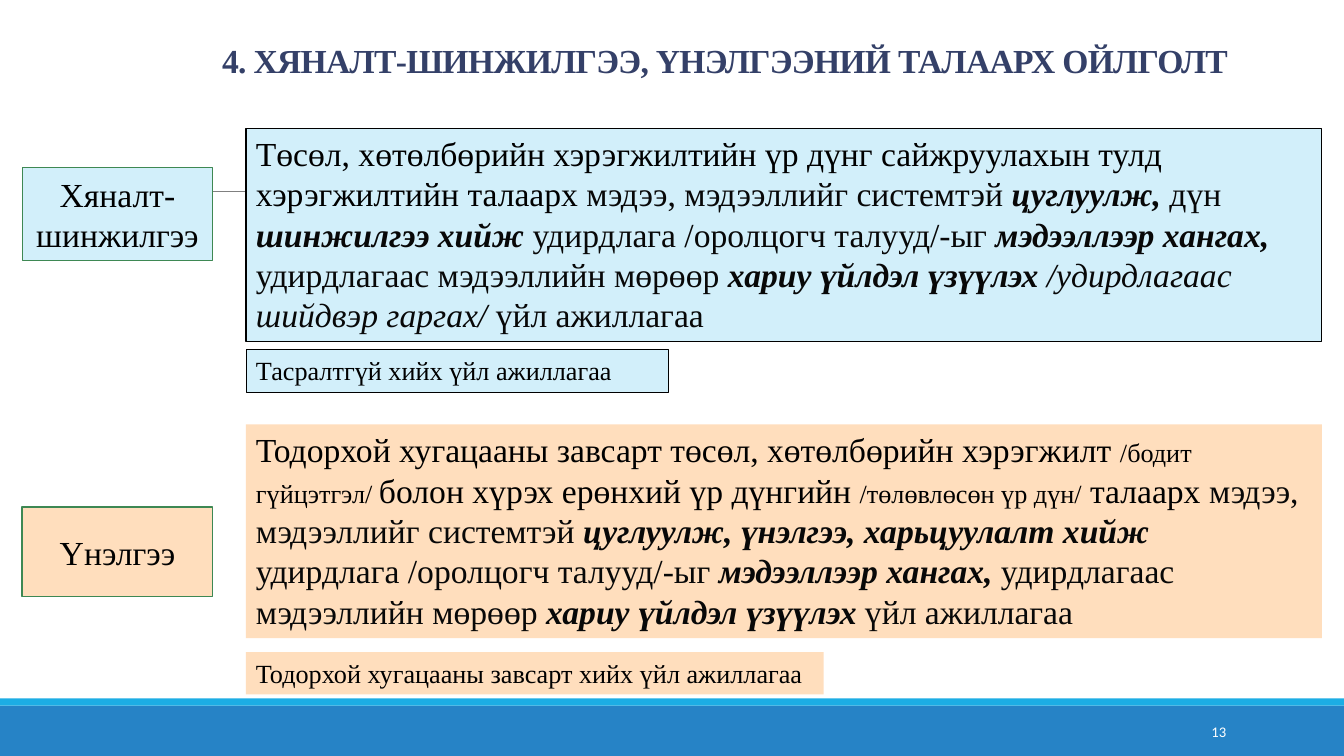
from lxml import etree
from pptx import Presentation
from pptx.dml.color import RGBColor
from pptx.enum.shapes import MSO_CONNECTOR, MSO_SHAPE
from pptx.enum.text import MSO_ANCHOR, PP_ALIGN
from pptx.oxml.ns import qn
from pptx.util import Inches, Pt

RECT = MSO_SHAPE.RECTANGLE
STRAIGHT = MSO_CONNECTOR.STRAIGHT
TOP, MIDDLE = MSO_ANCHOR.TOP, MSO_ANCHOR.MIDDLE
LEFT, CENTER, RIGHT = PP_ALIGN.LEFT, PP_ALIGN.CENTER, PP_ALIGN.RIGHT
SERIF, SANS = "Times New Roman", "Calibri"

COLORS = {
    "title": "344068", "black": "000000", "dark": "080808", "white": "FFFFFF",
    "blue": "D2EFFA", "peach": "FFDEBD", "green": "3E8853", "grey": "808080",
    "footer": "2683C6", "stripe": "1CADE4",
}

# style: size, colour, bold, italic
STYLES = {
    "plain": (24, "black", False, False),
    "small": (18.7, "black", False, False),
    "dark": (24, "dark", False, False),
    "strong": (24, "dark", True, True),
    "slanted": (24, "dark", False, True),
    "title": (24, "title", True, False),
    "number": (10.5, "white", False, False),
}

MONITORING = [
    ("Төсөл, хөтөлбөрийн хэрэгжилтийн үр дүнг сайжруулахын тулд хэрэгжилтийн талаарх ", "plain"),
    ("мэдээ, мэдээллийг системтэй ", "dark"),
    ("цуглуулж,", "strong"),
    (" дүн ", "dark"),
    ("шинжилгээ хийж ", "strong"),
    ("удирдлага /оролцогч талууд/-ыг ", "dark"),
    ("мэдээллээр хангах, ", "strong"),
    ("удирдлагаас мэдээллийн мөрөөр ", "dark"),
    ("хариу үйлдэл үзүүлэх ", "strong"),
    ("/удирдлагаас шийдвэр гаргах/ ", "slanted"),
    ("үйл ажиллагаа", "dark"),
]
EVALUATION = [
    ("Тодорхой хугацааны завсарт төсөл, хөтөлбөрийн хэрэгжилт ", "plain"),
    ("/бодит гүйцэтгэл/ ", "small"),
    ("болон хүрэх ерөнхий үр дүнгийн ", "plain"),
    ("/төлөвлөсөн үр дүн/", "small"),
    (" талаарх ", "plain"),
    ("мэдээ, мэдээллийг системтэй ", "dark"),
    ("цуглуулж, үнэлгээ, харьцуулалт хийж ", "strong"),
    ("удирдлага /оролцогч талууд/-ыг ", "dark"),
    ("мэдээллээр хангах, ", "strong"),
    ("удирдлагаас мэдээллийн мөрөөр ", "dark"),
    ("хариу үйлдэл үзүүлэх ", "strong"),
    ("үйл ажиллагаа", "dark"),
]


def rgb(name):
    """Return the named colour."""
    return RGBColor.from_string(COLORS[name])


def write(sp, runs, align=LEFT, anchor=TOP, wrap=True, font=SERIF):
    """Fill a shape with one paragraph of styled runs and return it."""
    tf = sp.text_frame
    tf.word_wrap = wrap
    tf.vertical_anchor = anchor
    p = tf.paragraphs[0]
    p.alignment = align
    p.font.name = font
    for text, style in runs:
        r = p.add_run()
        r.text = text
        size, color, bold, italic = STYLES[style]
        r.font.name = font
        r.font.size = Pt(size)
        r.font.bold, r.font.italic = bold, italic
        r.font.color.rgb = rgb(color)
    return p


def add_rect(s, box, fill, line=None, width=0.75):
    """Add a flat rectangle, outlined if a line colour is given."""
    sp = s.shapes.add_shape(RECT, *map(Inches, box))
    sp.shadow.inherit = False
    sp.fill.solid()
    sp.fill.fore_color.rgb = rgb(fill)
    if line:
        sp.line.color.rgb = rgb(line)
        sp.line.width = Pt(width)
    else:
        sp.line.fill.background()
    return sp


def add_backdrop(s, width, height):
    """Draw the footer bands, the thin rule and the slide number."""
    add_rect(s, (0, height - 0.5, width, 0.5), "footer")
    add_rect(s, (0, height - 0.57, width, 0.07), "stripe")
    rule = s.shapes.add_connector(STRAIGHT, Inches(1.31), Inches(1.9), Inches(12.21), Inches(1.9))
    rule.line.color.rgb = rgb("grey")
    rule.line.width = Pt(0.5)
    etree.SubElement(rule._element.spPr, qn("a:effectLst"))
    number = s.shapes.add_textbox(*map(Inches, (10.83, height - 0.44, 1.43, 0.4)))
    write(number, [("13", "number")], RIGHT, MIDDLE, font=SANS)


def add_title(s, box, text):
    """Add the centred slide title."""
    p = write(s.shapes.add_textbox(*map(Inches, box)), [(text, "title")], CENTER, MIDDLE)
    p.line_spacing = 0.85
    p.runs[0].font._element.set("spc", "-50")


def add_concept(s, box, fill, label, label_box, label_width, runs, note, note_box, line=None, wrap=True):
    """Draw a term, its definition and a note, offset from the top of the box."""
    x, y, w, h = box
    label_y, label_h = label_box
    note_y, note_w = note_box
    term = add_rect(s, (x, y + label_y, 1.89, label_h), fill, "green", label_width)
    write(term, [(label, "plain")], CENTER, MIDDLE)
    text_x = x + 2.22
    write(add_rect(s, (text_x, y, w - 2.22, h), fill, line), runs)
    write(add_rect(s, (text_x, y + note_y, note_w, 0.42), fill, line), [(note, "small")], wrap=wrap)


def main():
    """Build the slide and save it."""
    prs = Presentation()
    prs.slide_width, prs.slide_height = Inches(13.33), Inches(7.5)
    s = prs.slides.add_slide(prs.slide_layouts[6])
    add_backdrop(s, 13.33, 7.5)
    add_title(s, (1.97, 0.32, 10.44, 0.62), "4. ХЯНАЛТ-ШИНЖИЛГЭЭ, ҮНЭЛГЭЭНИЙ ТАЛААРХ ОЙЛГОЛТ")
    add_concept(s, (0.22, 1.27, 12.89, 2.12), "blue", "Хяналт-шинжилгээ", (0.39, 0.93), 0.75,
                MONITORING, "Тасралтгүй хийх үйл ажиллагаа", (2.2, 4.19), line="black")
    add_concept(s, (0.22, 4.21, 12.89, 2.12), "peach", "Үнэлгээ", (0.82, 0.89), 1,
                EVALUATION, "Тодорхой хугацааны завсарт хийх үйл ажиллагаа", (2.26, 5.73), wrap=False)
    prs.save("out.pptx")


if __name__ == "__main__":
    main()
